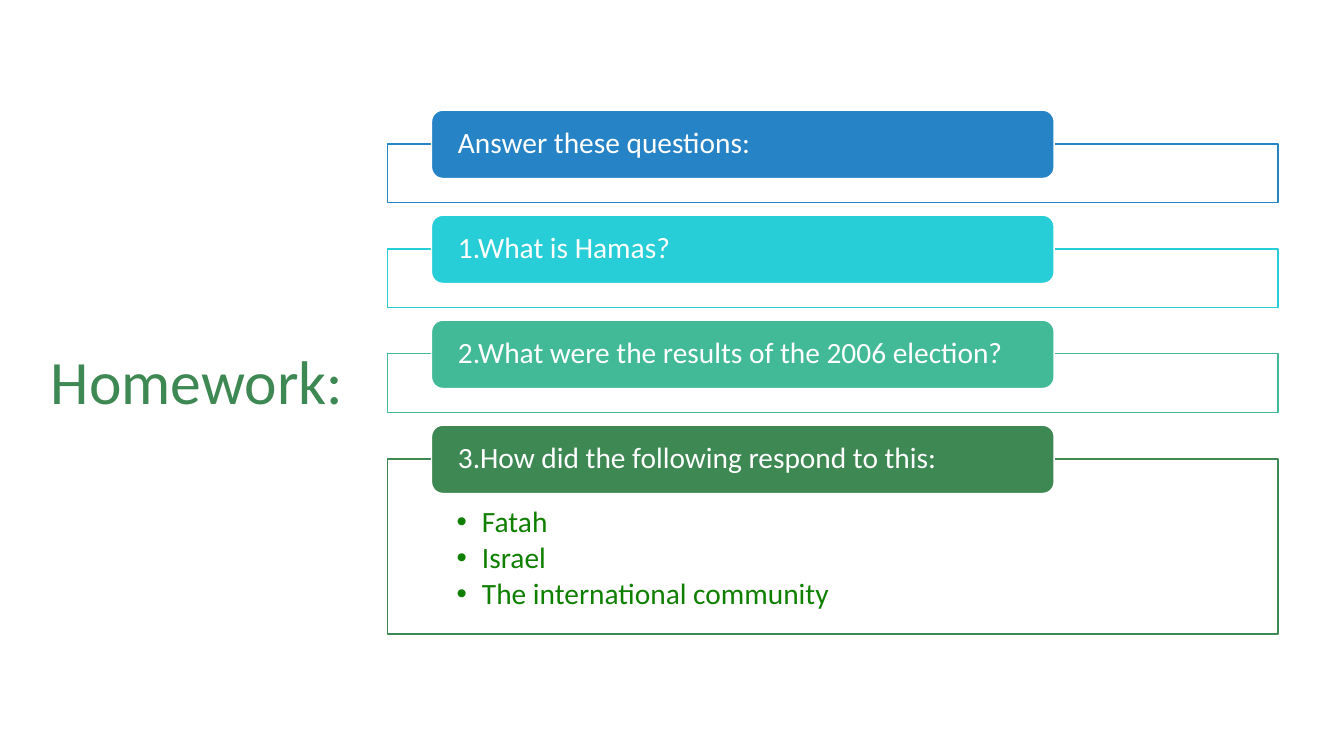
from lxml import etree
from pptx import Presentation
from pptx import util as u
from pptx.dml.color import RGBColor
from pptx.enum import shapes, text
from pptx.oxml.ns import qn

PX = 9525
FONT = "Calibri"
WHITE = "FFFFFF"
TITLE_GREEN = "3E8853"
BULLET_GREEN = "0F7F00"

FRAME_LEFT, FRAME_TOP, FRAME_WIDTH = 369, 137, 848
TAB_LEFT, TAB_TOP, TAB_WIDTH, TAB_HEIGHT = 411, 105, 593, 65
ROW_PITCH = 100

# heading, colour, frame height, answers
QUESTIONS = [
    ("Answer these questions:", "2683C6", 56, []),
    ("1.What is Hamas?", "27CED7", 56, []),
    ("2.What were the results of the 2006 election?", "42BA97", 56, []),
    ("3.How did the following respond to this:", "3E8853", 167,
     ["Fatah", "Israel", "The international community"]),
]


def px(n):
    return u.Emu(n * PX)


def rgb(value):
    return RGBColor.from_string(value)


def set_margins(tf, left, top, right, bottom):
    tf.margin_left, tf.margin_top = px(left), px(top)
    tf.margin_right, tf.margin_bottom = px(right), px(bottom)


def set_text(tf, lines, size, color, anchor):
    tf.word_wrap = True
    tf.vertical_anchor = anchor
    tf.text = "\n".join(lines)
    for p in tf.paragraphs:
        p.alignment = text.PP_ALIGN.LEFT
        p.line_spacing = 0.9
        for r in p.runs:
            r.font.name = FONT
            r.font.size = u.Pt(size)
            r.font.color.rgb = rgb(color)


def add_bullets(tf):
    for p in tf.paragraphs:
        p.space_after = u.Pt(3)
        pPr = p._p.get_or_add_pPr()
        pPr.set("marL", str(px(24)))
        pPr.set("indent", str(px(-24)))
        etree.SubElement(pPr, qn("a:buFont")).set("typeface", "Arial")
        etree.SubElement(pPr, qn("a:buChar")).set("char", "•")


def add_box(s, kind, left, top, width, height, fill, line):
    sp = s.shapes.add_shape(kind, px(left), px(top), px(width), px(height))
    sp.shadow.inherit = False
    sp.fill.solid()
    sp.fill.fore_color.rgb = rgb(fill)
    sp.line.color.rgb = rgb(line)
    sp.line.width = u.Pt(1)
    return sp


def add_title(s, title):
    sp = s.shapes.add_textbox(px(39), px(77), px(329), px(578))
    set_text(sp.text_frame, [title], 44, TITLE_GREEN, text.MSO_ANCHOR.MIDDLE)


def add_question(s, row, heading, color, frame_height, answers):
    """Outlined frame with a rounded heading tab over its top edge."""
    offset = row * ROW_PITCH
    frame = add_box(s, shapes.MSO_SHAPE.RECTANGLE, FRAME_LEFT, FRAME_TOP + offset,
                    FRAME_WIDTH, frame_height, WHITE, color)
    if answers:
        tf = frame.text_frame
        set_margins(tf, 66, 46, 66, 15)
        set_text(tf, answers, 21, BULLET_GREEN, text.MSO_ANCHOR.TOP)
        add_bullets(tf)

    tab = add_box(s, shapes.MSO_SHAPE.ROUNDED_RECTANGLE, TAB_LEFT, TAB_TOP + offset,
                  TAB_WIDTH, TAB_HEIGHT, color, WHITE)
    set_margins(tab.text_frame, 22, 0, 22, 0)
    set_text(tab.text_frame, [heading], 21, WHITE, text.MSO_ANCHOR.MIDDLE)


def main():
    prs = Presentation()
    prs.slide_width, prs.slide_height = px(1280), px(720)
    s = prs.slides.add_slide(prs.slide_layouts[6])
    add_title(s, "Homework:")
    for row, question in enumerate(QUESTIONS):
        add_question(s, row, *question)
    prs.save("out.pptx")


if __name__ == "__main__":
    main()
